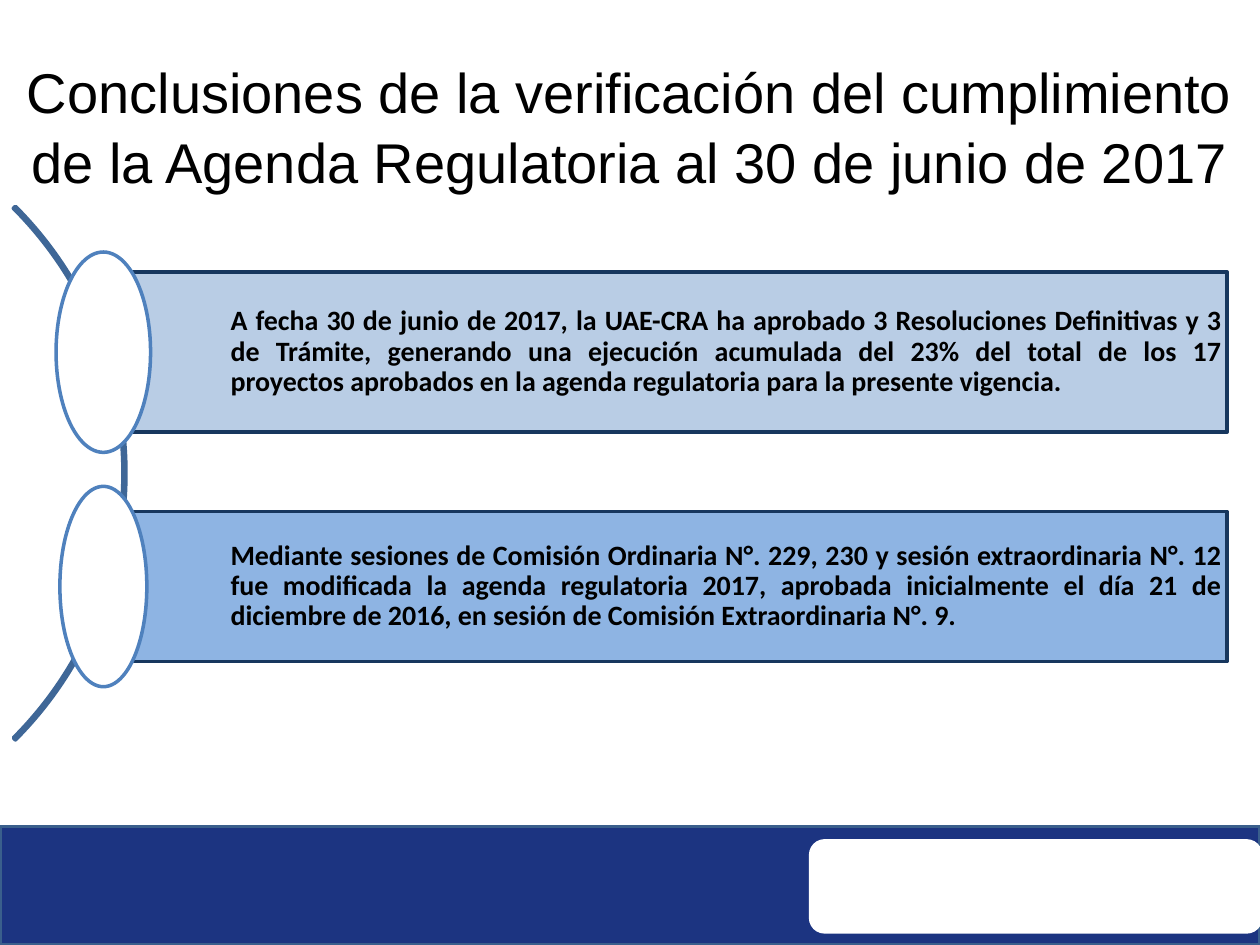
from lxml.etree import SubElement
from pptx import Presentation
from pptx.dml.color import RGBColor
from pptx.enum.shapes import MSO_SHAPE
from pptx.enum.text import MSO_ANCHOR, PP_ALIGN
from pptx.oxml.ns import qn
from pptx.util import Inches, Pt

BLACK = RGBColor(0x00, 0x00, 0x00)
WHITE = RGBColor(0xFF, 0xFF, 0xFF)
NAVY = RGBColor(0x1C, 0x34, 0x81)
FOOTER_LINE = RGBColor(0x3A, 0x5F, 0x8C)
ARC_LINE = RGBColor(0x3F, 0x67, 0x97)
PANEL_LINE = RGBColor(0x17, 0x37, 0x5E)
OVAL_LINE = RGBColor(0x4F, 0x81, 0xBD)
PALE_BLUE = RGBColor(0xB9, 0xCD, 0xE5)
MID_BLUE = RGBColor(0x8E, 0xB4, 0xE3)

TITLE = ("Conclusiones de la verificación del cumplimiento "
         "de la Agenda Regulatoria al 30 de junio de 2017")

# text, fill, panel top, panel height, oval width
CONCLUSIONS = [
    ("A fecha 30 de junio de 2017, la UAE-CRA ha aprobado 3 Resoluciones Definitivas "
     "y 3 de Trámite, generando una ejecución acumulada del 23% del total de los 17 "
     "proyectos aprobados en la agenda regulatoria para la presente vigencia.",
     PALE_BLUE, 2.16, 1.27, 0.75),
    ("Mediante sesiones de Comisión Ordinaria N°. 229, 230 y sesión extraordinaria "
     "N°. 12 fue modificada la agenda regulatoria 2017, aprobada inicialmente el día "
     "21 de diciembre de 2016, en sesión de Comisión Extraordinaria N°. 9.",
     MID_BLUE, 4.06, 1.19, 0.69),
]
PANEL_LEFT, PANEL_WIDTH = 0.82, 8.92
OVAL_HEIGHT = 1.59


def add_box(slide, kind, left, top, width, height, fill=None, line=None):
    shape = slide.shapes.add_shape(
        kind, Inches(left), Inches(top), Inches(width), Inches(height))
    shape.shadow.inherit = False
    if fill is None:
        shape.fill.background()
    else:
        shape.fill.solid()
        shape.fill.fore_color.rgb = fill
    if line is None:
        shape.line.fill.background()
    else:
        shape.line.color.rgb = line
        shape.line.width = Pt(2)
    return shape


def write_text(text_frame, text, font_name, size, alignment, spacing, bold=False):
    text_frame.word_wrap = True
    text_frame.text = text
    paragraph = text_frame.paragraphs[0]
    paragraph.alignment = alignment
    paragraph.line_spacing = spacing
    font = paragraph.runs[0].font
    font.size = Pt(size)
    font.bold = bold
    font.color.rgb = BLACK
    font.name = font_name
    return paragraph.runs[0]


def add_text_shadow(run):
    properties = run.font._element
    effects = SubElement(properties, qn("a:effectLst"))
    properties.find(qn("a:solidFill")).addnext(effects)
    shadow = SubElement(effects, qn("a:outerShdw"),
                        blurRad="38100", dist="38100", dir="2700000", algn="tl")
    color = SubElement(shadow, qn("a:srgbClr"), val="000000")
    SubElement(color, qn("a:alpha"), val="43000")


def add_conclusion(slide, text, fill, top, height, oval_width):
    panel = add_box(slide, MSO_SHAPE.RECTANGLE, PANEL_LEFT, top,
                    PANEL_WIDTH, height, fill, PANEL_LINE)
    frame = panel.text_frame
    frame.vertical_anchor = MSO_ANCHOR.MIDDLE
    frame.margin_left = Inches(1.01)
    frame.margin_top = frame.margin_right = frame.margin_bottom = Inches(0.04)
    write_text(frame, text, "Calibri", 16, PP_ALIGN.JUSTIFY, 0.9, bold=True)
    add_box(slide, MSO_SHAPE.OVAL, PANEL_LEFT - oval_width / 2,
            top + (height - OVAL_HEIGHT) / 2, oval_width, OVAL_HEIGHT, WHITE, OVAL_LINE)


def main():
    presentation = Presentation()
    presentation.slide_width = Inches(10)
    presentation.slide_height = Inches(7.5)
    slide = presentation.slides.add_slide(presentation.slide_layouts[6])

    add_box(slide, MSO_SHAPE.RECTANGLE, 0, 6.56, 10, 0.94, NAVY, FOOTER_LINE)
    add_box(slide, MSO_SHAPE.ROUNDED_RECTANGLE, 6.42, 6.66, 3.6, 0.75, WHITE)

    title = slide.shapes.add_textbox(Inches(0.04), Inches(0.38), Inches(9.92), Inches(1.18))
    add_text_shadow(write_text(title.text_frame, TITLE, "Arial", 32, PP_ALIGN.CENTER, 1.05))

    arc = add_box(slide, MSO_SHAPE.BLOCK_ARC, -4.99, 0.76, 5.99, 5.99, line=ARC_LINE)
    for index, value in enumerate((189, 27, 0.004)):
        arc.adjustments[index] = value

    for conclusion in CONCLUSIONS:
        add_conclusion(slide, *conclusion)

    presentation.save("out.pptx")


if __name__ == "__main__":
    main()
